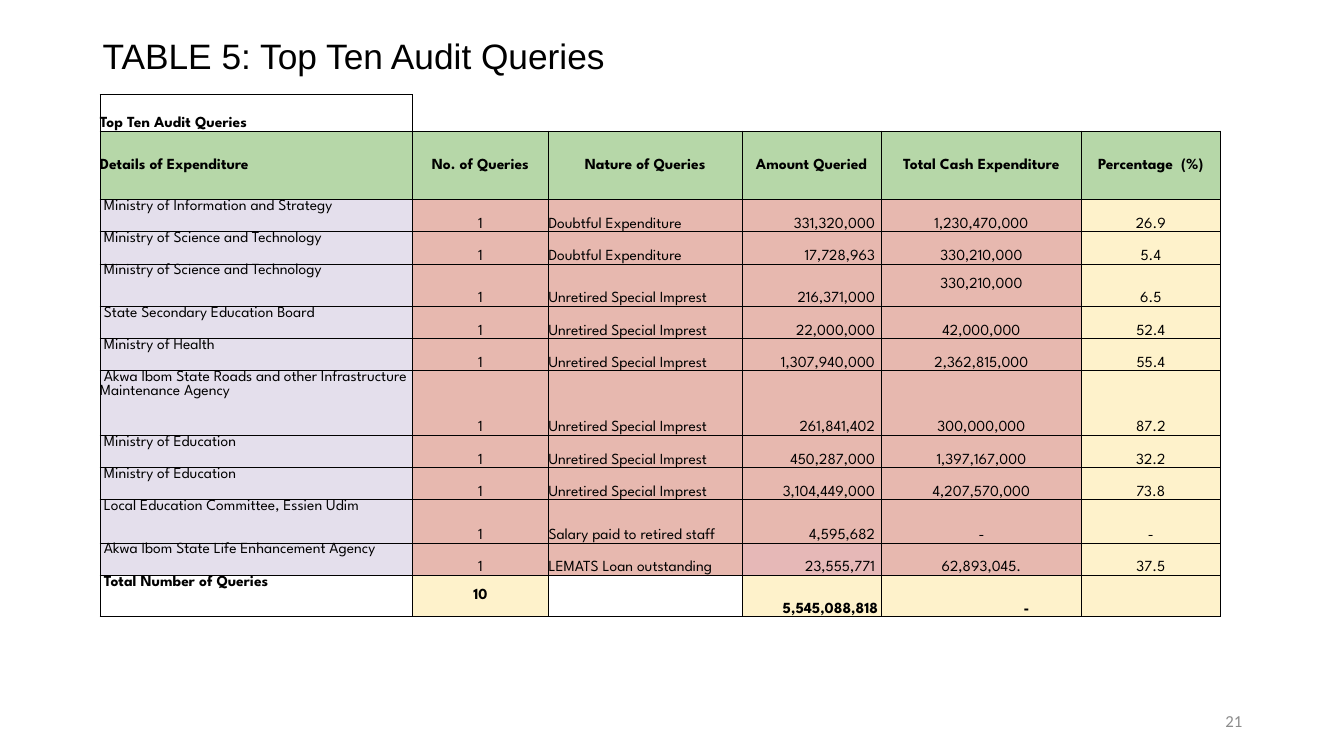
from lxml.etree import SubElement as Sub, Element
from pptx import Presentation
from pptx.dml.color import RGBColor as RGB
from pptx.enum.text import MSO_ANCHOR as Anchor, PP_ALIGN as Align
from pptx.oxml.ns import qn
from pptx.util import Inches, Pt

# Content
TITLE = "TABLE 5: Top Ten Audit Queries"
PAGE = "21"
HEAD = ["Details of Expenditure", "No. of Queries", "Nature of Queries",
        "Amount Queried", "Total Cash Expenditure", "Percentage  (%)"]
DOUBT, LOAN = "Doubtful Expenditure", "LEMATS Loan outstanding"
UNRET, PAID = "Unretired Special Imprest", "Salary paid to retired staff"
BODY = [
    ("Ministry of Information and Strategy", "1", DOUBT, "331,320,000", "1,230,470,000", "26.9"),
    ("Ministry of Science and Technology", "1", DOUBT, "17,728,963", "330,210,000", "5.4"),
    ("Ministry of Science and Technology", "1", UNRET, "216,371,000", "330,210,000", "6.5"),
    ("State Secondary Education Board", "1", UNRET, "22,000,000", "42,000,000", "52.4"),
    ("Ministry of Health", "1", UNRET, "1,307,940,000", "2,362,815,000", "55.4"),
    ("Akwa Ibom State Roads and other Infrastructure Maintenance Agency", "1", UNRET,
     "261,841,402", "300,000,000", "87.2"),
    ("Ministry of Education", "1", UNRET, "450,287,000", "1,397,167,000", "32.2"),
    ("Ministry of Education", "1", UNRET, "3,104,449,000", "4,207,570,000", "73.8"),
    ("Local Education Committee, Essien Udim", "1", PAID, "4,595,682", "-", "-"),
    ("Akwa Ibom State Life Enhancement Agency", "1", LOAN, "23,555,771", "62,893,045.", "37.5"),
]
TOTAL = ["Total Number of Queries", "10", "", "5,545,088,818", "-", ""]
BLANK = [""] * 6
ROWS = [["Top Ten Audit Queries"] + BLANK[1:], HEAD, *BODY, TOTAL, BLANK]
SUM = len(ROWS) - 2

COLS = [3.1, 1.35, 1.92, 1.38, 1.99, 1.37]
TALL = {0: 0.36, 1: 0.68, 4: 0.42, 7: 0.64, 10: 0.43, 12: 0.41, 13: 0.29}
HUES = {"ink": "000000", "page": "8C8C8C", "head": "B6D7A8", "name": "E4DFEC",
        "rose": "E7B8AF", "pink": "E6B8B7", "cream": "FEF2CB", "white": "FFFFFF"}
BAND = ["name", "rose", "rose", "rose", "rose", "cream"]
SUMS = [None, "cream", "white", "cream", "cream", "cream"]
SIDES = [Align.LEFT, Align.CENTER, Align.LEFT, Align.RIGHT, Align.CENTER, Align.CENTER]
PLAIN = "{2D5ABB26-0587-4C30-8999-92F81FD0307C}"


def write(par, text, font, size, hue, bold=False):
    run = par.add_run()
    run.text = text
    run.font.name, run.font.size, run.font.bold = font, Pt(size), bold
    run.font.color.rgb = RGB.from_string(HUES[hue])


def label(box, text, font, size, hue, side):
    frame = slide.shapes.add_textbox(*map(Inches, box)).text_frame
    frame.word_wrap = True
    frame.vertical_anchor = Anchor.MIDDLE
    par = frame.paragraphs[0]
    par.alignment = side
    write(par, text, font, size, hue)
    return par


def edge(cell):
    prop = cell._tc.get_or_add_tcPr()
    for i, tag in enumerate(("a:lnL", "a:lnR", "a:lnT", "a:lnB")):
        line = Element(qn(tag), w=str(Pt(0.5)))
        Sub(Sub(line, qn("a:solidFill")), qn("a:srgbClr"), val=HUES["ink"])
        prop.insert(i, line)


def tint(row, col):
    if row in (0, SUM + 1):
        return None
    if row == 1:
        return "head"
    if row == SUM:
        return SUMS[col]
    return "pink" if (row, col) == (SUM - 1, 3) else BAND[col]


def place(row, col):
    if row == 1 or (row, col) in ((4, 4), (SUM, 1)):
        return Anchor.MIDDLE
    return Anchor.TOP if col == 0 and row > 1 else Anchor.BOTTOM


def fill(cell, row, col, text):
    hue = tint(row, col)
    if hue:
        cell.fill.solid()
        cell.fill.fore_color.rgb = RGB.from_string(HUES[hue])
    else:
        cell.fill.background()
    cell.margin_left = cell.margin_right = cell.margin_top = cell.margin_bottom = 0
    cell.vertical_anchor = place(row, col)
    par = cell.text_frame.paragraphs[0]
    par.alignment = Align.CENTER if row == 1 and col else SIDES[col]
    if col == 0 and row > 1:
        par._p.get_or_add_pPr().set("indent", str(Inches(0.04)))
    if col == 3 and row > 1:
        cell.margin_right = Inches(0.03 if row == SUM else 0.06)
    if (row, col) == (SUM, 4):
        par.alignment, cell.margin_right = Align.RIGHT, Inches(0.52)
    if text:
        write(par, text, "League Spartan", 11, "ink", row in (0, 1, SUM))
    else:
        Sub(par._p, qn("a:endParaRPr"), sz="1100")
    if 0 < row <= SUM or (row, col) == (0, 0):
        edge(cell)


deck = Presentation()
deck.slide_width, deck.slide_height = Inches(13.33), Inches(7.5)
slide = deck.slides.add_slide(deck.slide_layouts[6])

# Title
label((0.92, 0.4, 11.5, 0.36), TITLE, "Arial", 25.2, "ink", Align.LEFT).line_spacing = 0.9

# Table of queries
highs = [TALL.get(i, 0.32) for i in range(len(ROWS))]
size = map(Inches, (0.99, 0.94, sum(COLS), sum(highs)))
table = slide.shapes.add_table(len(ROWS), len(COLS), *size).table
table.first_row = table.horz_banding = False
table._tbl.tblPr.find(qn("a:tableStyleId")).text = PLAIN
for part, wide in zip(table.columns, COLS):
    part.width = Inches(wide)
for r, (line, high) in enumerate(zip(ROWS, highs)):
    table.rows[r].height = Inches(high)
    for c, text in enumerate(line):
        fill(table.cell(r, c), r, c, text)

# Page number
label((9.42, 6.95, 3, 0.4), PAGE, "Calibri", 12, "page", Align.RIGHT)

deck.save("out.pptx")
